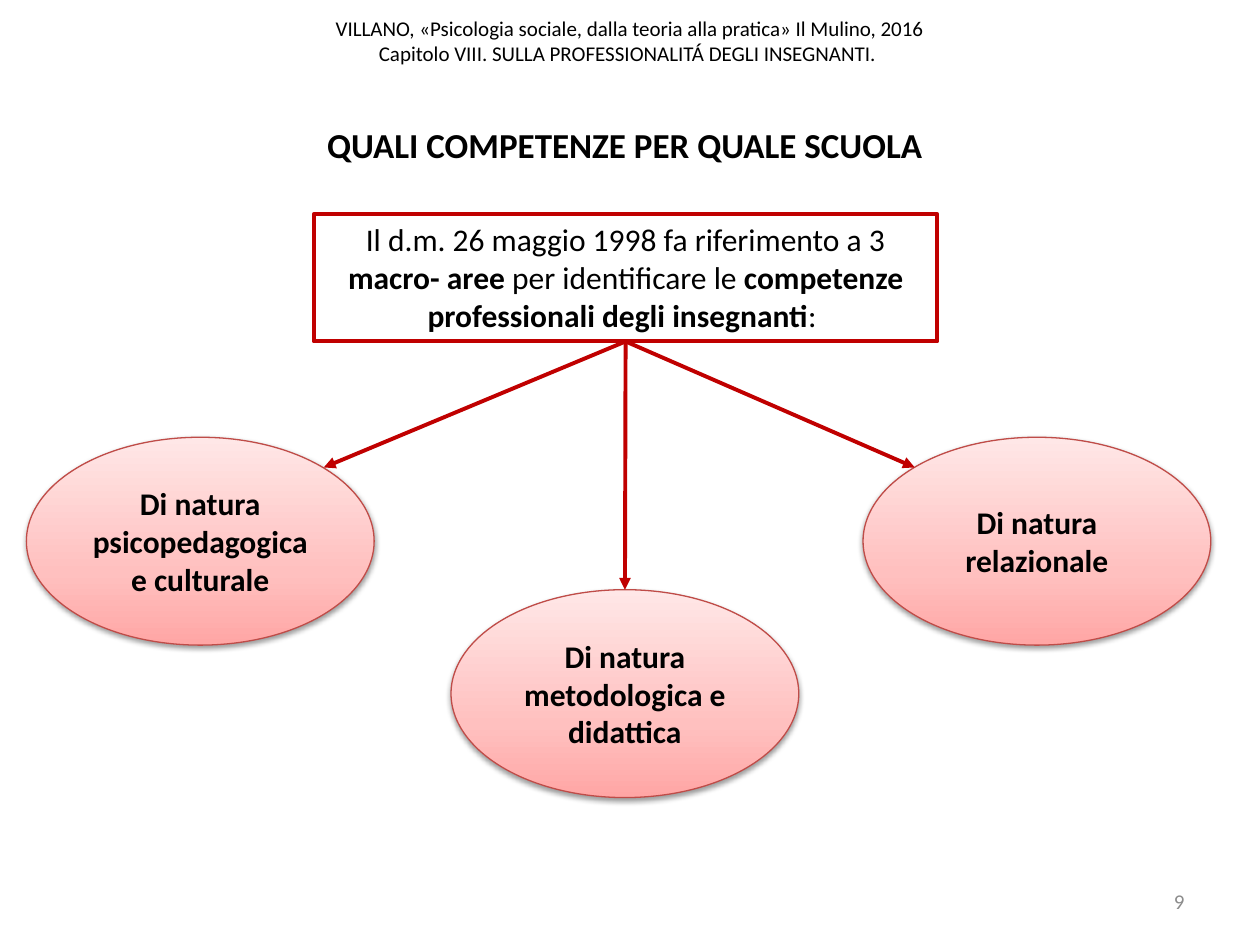
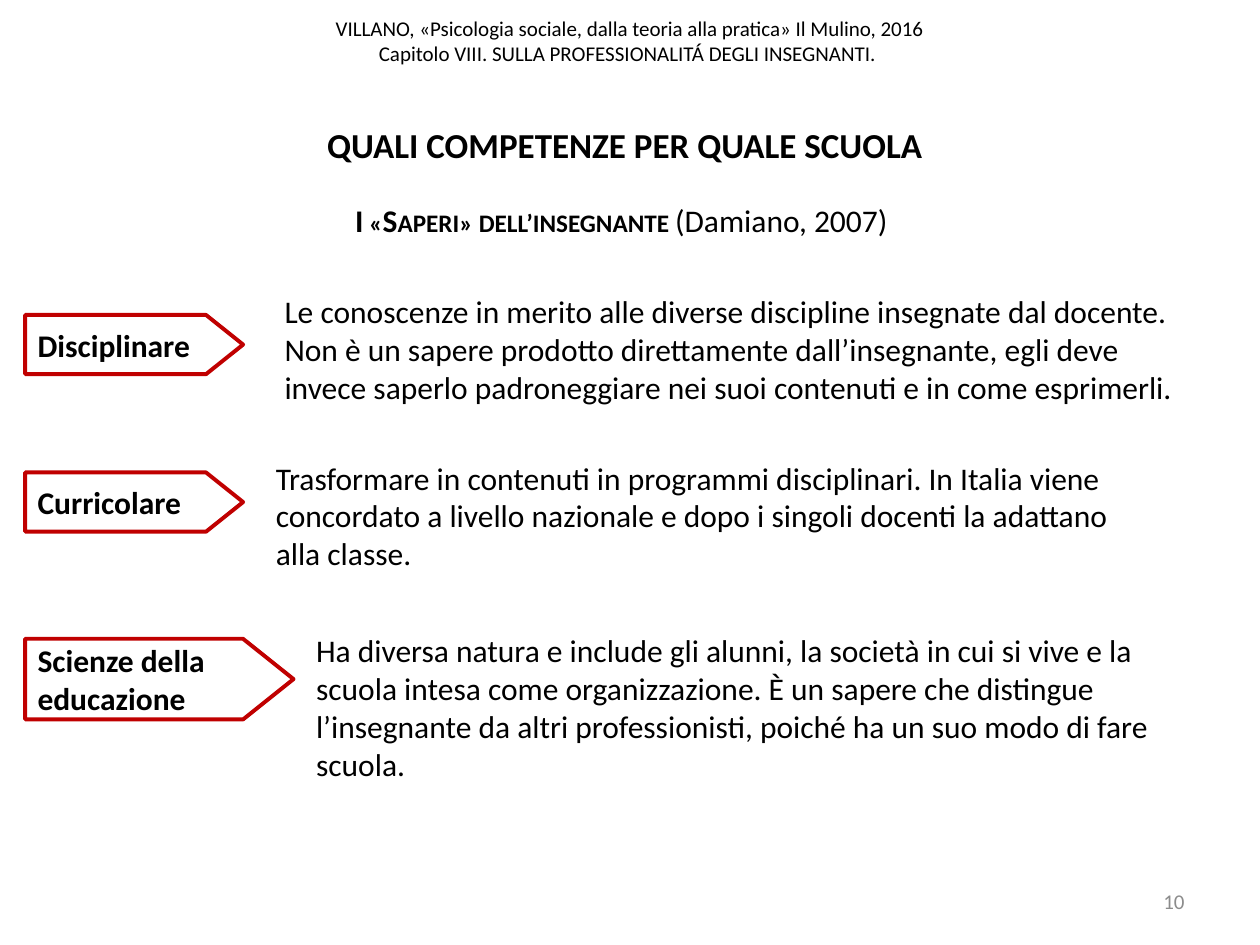
"""Builds two slides on the competences and kinds of knowledge of teachers."""
from lxml import etree
from pptx import Presentation
from pptx.dml.color import RGBColor
from pptx.enum.shapes import MSO_CONNECTOR, MSO_SHAPE
from pptx.enum.text import MSO_ANCHOR, PP_ALIGN
from pptx.oxml.ns import qn
from pptx.util import Inches, Pt

LEFT, MID, RIGHT = PP_ALIGN.LEFT, PP_ALIGN.CENTER, PP_ALIGN.RIGHT
TOP, CENTRE = MSO_ANCHOR.TOP, MSO_ANCHOR.MIDDLE
RECT, OVAL, TAG = MSO_SHAPE.RECTANGLE, MSO_SHAPE.OVAL, MSO_SHAPE.PENTAGON
STRAIGHT = MSO_CONNECTOR.STRAIGHT

FONT = "Calibri"
BLACK, GREY, RED, ROSE = "000000", "8C8C8C", "C00000", "BF4C48"
STOPS = [(0, "FFA6A5"), (35, "FFC0BF"), (100, "FFE7E7")]

HEAD = ("VILLANO, «Psicologia sociale, dalla teoria alla pratica» Il Mulino, 2016\v"
        "Capitolo VIII. SULLA PROFESSIONALITÁ DEGLI INSEGNANTI. ")
TITLE = "QUALI COMPETENZE PER QUALE SCUOLA"

DECREE = [("Il d.m. 26 maggio 1998 fa riferimento a 3 ", ""), ("macro- aree ", "b"),
          ("per identificare le ", ""),
          ("competenze professionali degli insegnanti", "b"), (": ", "")]
DECREE_BOX = (2.49, 1.7, 4.95, 1.01)
OVAL_SIZE = (2.76, 1.65)
AREAS = [
    ("Di natura psicopedagogica e culturale", (0.21, 3.47), (2.57, 3.71)),
    ("Di natura metodologica e didattica", (3.58, 4.68), None),
    ("Di natura relazionale", (6.85, 3.47), (7.26, 3.71)),
]

SUBTITLE = [("I «Saperi» dell’insegnante ", "bs"), ("(Damiano, 2007)", "")]
KINDS = [
    ("Disciplinare", (0.2, 2.5, 1.73, 0.47), (2.16, 2.27, 7.48, 1.01),
     ["Le conoscenze in merito alle diverse discipline insegnate dal docente.",
      "Non è un sapere prodotto direttamente dall’insegnante, egli deve invece "
      "saperlo padroneggiare nei suoi contenuti e in come esprimerli."]),
    ("Curricolare", (0.2, 3.75, 1.73, 0.47), (2.09, 3.59, 7.18, 1.01),
     ["Trasformare in contenuti in programmi disciplinari. In Italia viene "
      "concordato a livello nazionale e dopo i singoli docenti la adattano "
      "alla classe."]),
    ("Scienze della educazione", (0.2, 5.07, 2.13, 0.64), (2.41, 4.96, 7.09, 1.31),
     ["Ha diversa natura e include gli alunni, la società in cui si vive e la "
      "scuola intesa come organizzazione. È un sapere che distingue l’insegnante "
      "da altri professionisti, poiché ha un suo modo di fare scuola."]),
]


def rgb(code):
    return RGBColor.from_string(code)


def spots(box):
    return [Inches(n) for n in box]


def write(shape, paras, size=18, color=BLACK, align=LEFT, anchor=TOP):
    frame = shape.text_frame
    frame.word_wrap = True
    frame.vertical_anchor = anchor
    for i, runs in enumerate(paras):
        para = frame.add_paragraph() if i else frame.paragraphs[0]
        para.alignment = align
        for text, style in runs:
            for j, line in enumerate(text.split("\v")):
                if j:
                    para.add_line_break()
                run = para.add_run()
                run.text = line
                font = run.font
                font.name, font.size, font.bold = FONT, Pt(size), "b" in style
                font.color.rgb = rgb(color)
                if "s" in style:
                    run._r.get_or_add_rPr().set("cap", "small")


def label(slide, box, paras, **look):
    write(slide.shapes.add_textbox(*spots(box)), paras, **look)


def draw(slide, kind, box, line=RED, width=2.25):
    shape = slide.shapes.add_shape(kind, *spots(box))
    shape.shadow.inherit = False
    shape.fill.background()
    shape.line.color.rgb = rgb(line)
    shape.line.width = Pt(width)
    return shape


def tint(node, code):
    return etree.SubElement(node, qn("a:srgbClr"), val=code)


def glow(shape):
    shape.fill.gradient()
    shape.fill.gradient_angle = 90
    props = shape._element.spPr
    stops = props.find(qn("a:gradFill")).find(qn("a:gsLst"))
    for old in list(stops):
        stops.remove(old)
    for pos, code in STOPS:
        tint(etree.SubElement(stops, qn("a:gs"), pos=str(pos * 1000)), code)
    shade = etree.SubElement(
        props.find(qn("a:effectLst")), qn("a:outerShdw"), blurRad=str(Pt(3.1)),
        dist=str(Pt(1.6)), dir="5400000", rotWithShape="0")
    etree.SubElement(tint(shade, BLACK), qn("a:alpha"), val="38000")


def arrow(slide, start, tip, goal):
    line = slide.shapes.add_connector(STRAIGHT, 0, 0, *spots(tip or (0, 0)))
    line.begin_connect(start, 2)
    if not tip:
        line.end_connect(goal, 0)
    line.line.color.rgb = rgb(RED)
    line.line.width = Pt(2.25)
    etree.SubElement(line.line._get_or_add_ln(), qn("a:tailEnd"), type="triangle")
    etree.SubElement(line._element.spPr, qn("a:effectLst"))


def start(deck, number):
    slide = deck.slides.add_slide(deck.slide_layouts[6])
    label(slide, (0, -0.11, 10, 0.87), [[(HEAD, "")]], size=12, align=MID, anchor=CENTRE)
    label(slide, (7.17, 6.95, 2.33, 0.4), [[(str(number), "")]], size=12,
          color=GREY, align=RIGHT, anchor=CENTRE)
    label(slide, (1.69, 0.93, 6.54, 0.44), [[(TITLE, "b")]], size=20, align=MID)
    return slide


def areas(deck):
    slide = start(deck, 9)
    decree = draw(slide, RECT, DECREE_BOX)
    write(decree, [DECREE], align=MID)
    for text, spot, tip in AREAS:
        oval = draw(slide, OVAL, spot + OVAL_SIZE, ROSE, 0.75)
        glow(oval)
        write(oval, [[(text, "b")]], align=MID, anchor=CENTRE)
        arrow(slide, decree, tip, oval)


def kinds(deck):
    slide = start(deck, 10)
    label(slide, (2.72, 1.55, 5.04, 0.4), [SUBTITLE])
    for name, box, place, paras in KINDS:
        tag = draw(slide, TAG, box)
        tag.adjustments[0] = 0.626
        write(tag, [[(name, "b")]], anchor=CENTRE)
        label(slide, place, [[(text, "")] for text in paras])


def main():
    deck = Presentation()
    deck.slide_width, deck.slide_height = Inches(10), Inches(7.5)
    areas(deck)
    kinds(deck)
    deck.save("out.pptx")


if __name__ == "__main__":
    main()
